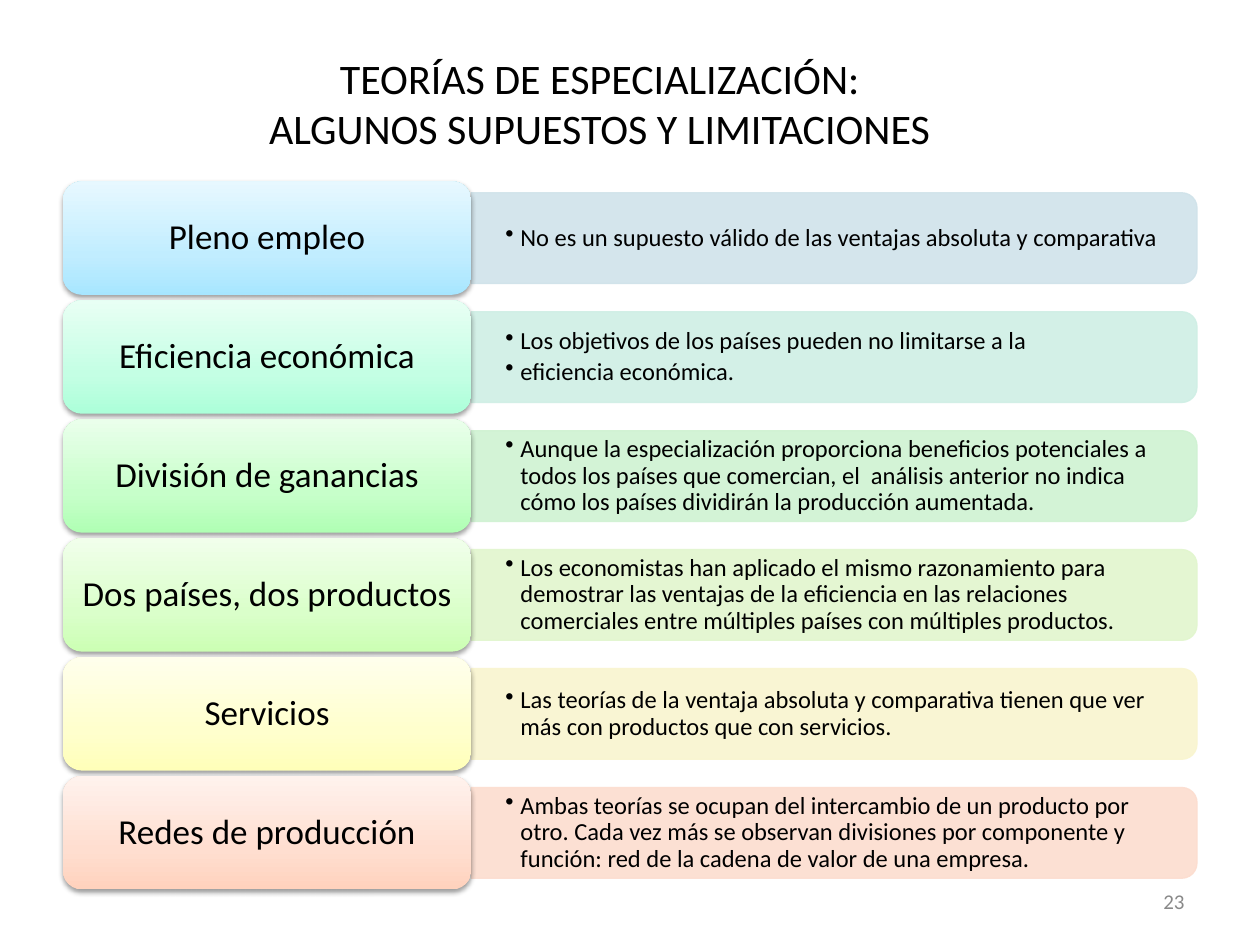
from dataclasses import dataclass

from pptx import Presentation
from pptx import util as u
from pptx.dml.color import RGBColor
from pptx.enum import shapes, text
from pptx.oxml import parse_xml
from pptx.oxml.ns import nsdecls, qn

FONT = "Calibri"
BLACK = RGBColor(0x00, 0x00, 0x00)
GREY = RGBColor(0x89, 0x89, 0x89)

FIRST_MIDDLE = 1.89
ROW_PITCH = 4.72 / 5
LABEL_LEFT, LABEL_WIDTH, LABEL_HEIGHT = 0.5, 3.24, 0.9
PANEL_LEFT, PANEL_WIDTH, PANEL_HEIGHT = 3.74, 5.76, 0.72
NOTE_WIDTH, NOTE_HEIGHT = 5.72, 0.65
LABEL_TEXT_INSET = 0.04
BULLET_INDENT = 0.12


@dataclass(frozen=True)
class Row:
    label: str
    notes: tuple[str, ...]
    panel: RGBColor
    bottom: RGBColor
    middle: RGBColor
    top: RGBColor


def hues(*codes: str) -> tuple[RGBColor, ...]:
    return tuple(RGBColor.from_string(code) for code in codes)


ROWS = (
    Row("Pleno empleo",
        ("No es un supuesto válido de las ventajas absoluta y comparativa",),
        *hues("D0E3EA", "A7E6FF", "C1EDFF", "E7F8FF")),
    Row("Eficiencia económica",
        ("Los objetivos de los países pueden no limitarse a la",
         "eficiencia económica."),
        *hues("CFEFE5", "ACFFD9", "C4FFE4", "E8FFF4")),
    Row("División de ganancias",
        ("Aunque la especialización proporciona beneficios potenciales a "
         "todos los países que comercian, el  análisis anterior no indica "
         "cómo los países dividirán la producción aumentada.",),
        *hues("CFF2D2", "B0FFB4", "C7FFCA", "EAFFEB")),
    Row("Dos países, dos productos",
        ("Los economistas han aplicado el mismo razonamiento para "
         "demostrar las ventajas de la eficiencia en las relaciones "
         "comerciales entre múltiples países con múltiples productos.",),
        *hues("E2F6CE", "CCFFB4", "DAFFCA", "F1FFEB")),
    Row("Servicios",
        ("Las teorías de la ventaja absoluta y comparativa tienen que ver "
         "más con productos que con servicios.",),
        *hues("F9F5CF", "FFFFB9", "FFFFCD", "FFFFEC")),
    Row("Redes de producción",
        ("Ambas teorías se ocupan del intercambio de un producto por "
         "otro. Cada vez más se observan divisiones por componente y "
         "función: red de la cadena de valor de una empresa.",),
        *hues("FCDDCF", "FFD2BD", "FFDED0", "FFF2ED")),
)


def add_text(page, lines, left: float, top: float, width: float, height: float, *,
             size: float, align=text.PP_ALIGN.CENTER, color: RGBColor = BLACK,
             insets: tuple[float, float] = (0.1, 0.05), line_spacing: float = 1.0,
             space_after: float = 0, bullet: bool = False) -> None:
    """Add a middle-anchored text box with one paragraph per line."""
    box = page.shapes.add_textbox(*map(u.Inches, (left, top, width, height)))
    frame = box.text_frame
    frame.word_wrap = True
    frame.vertical_anchor = text.MSO_ANCHOR.MIDDLE
    frame.margin_left = frame.margin_right = u.Inches(insets[0])
    frame.margin_top = frame.margin_bottom = u.Inches(insets[1])
    for index, line in enumerate(lines):
        para = frame.add_paragraph() if index else frame.paragraphs[0]
        para.text = line
        para.alignment = align
        para.line_spacing = line_spacing
        para.space_after = u.Pt(space_after)
        for span in para.runs:
            span.font.name = FONT
            span.font.size = u.Pt(size)
            span.font.color.rgb = color
        if bullet:
            props = para._p.get_or_add_pPr()
            props.set("marL", str(u.Inches(BULLET_INDENT)))
            props.set("indent", str(-u.Inches(BULLET_INDENT)))
            props.append(parse_xml(f'<a:buChar {nsdecls("a")} char="•"/>'))


def add_panel(page, middle: float, color: RGBColor) -> None:
    """Add a bar rounded at its right end: an upright shape turned a quarter."""
    center = PANEL_LEFT + PANEL_WIDTH / 2
    panel = page.shapes.add_shape(
        shapes.MSO_SHAPE.ROUND_2_SAME_RECTANGLE,
        u.Inches(center - PANEL_HEIGHT / 2), u.Inches(middle - PANEL_WIDTH / 2),
        u.Inches(PANEL_HEIGHT), u.Inches(PANEL_WIDTH))
    panel.rotation = 90
    panel.shadow.inherit = False
    panel.line.width = u.Pt(0.75)
    for fill in (panel.fill, panel.line.fill):
        fill.solid()
        fill.fore_color.rgb = color
    for tint in panel._element.spPr.iter(qn("a:srgbClr")):
        tint.append(parse_xml(f'<a:alpha {nsdecls("a")} val="90000"/>'))


def add_label(page, middle: float, row: Row) -> None:
    """Add a rounded rectangle with an upward gradient and a soft shadow."""
    label = page.shapes.add_shape(
        shapes.MSO_SHAPE.ROUNDED_RECTANGLE,
        u.Inches(LABEL_LEFT), u.Inches(middle - LABEL_HEIGHT / 2),
        u.Inches(LABEL_WIDTH), u.Inches(LABEL_HEIGHT))
    label.line.fill.background()
    label.shadow.inherit = False
    stops = "".join(
        f'<a:gs pos="{place * 1000}"><a:srgbClr val="{color}"/></a:gs>'
        for place, color in ((0, row.bottom), (35, row.middle), (100, row.top)))
    props = label._element.spPr
    props.find(qn("a:prstGeom")).addnext(parse_xml(
        f'<a:gradFill {nsdecls("a")} rotWithShape="1"><a:gsLst>{stops}</a:gsLst>'
        '<a:lin ang="16200000" scaled="0"/></a:gradFill>'))
    props.find(qn("a:effectLst")).append(parse_xml(
        f'<a:outerShdw {nsdecls("a")} blurRad="{u.Pt(3.1)}" dist="{u.Pt(1.6)}" '
        'dir="5400000" rotWithShape="0"><a:srgbClr val="000000">'
        '<a:alpha val="38000"/></a:srgbClr></a:outerShdw>'))


def add_row(page, middle: float, row: Row) -> None:
    add_panel(page, middle, row.panel)
    add_text(page, row.notes, PANEL_LEFT, middle - NOTE_HEIGHT / 2,
             NOTE_WIDTH, NOTE_HEIGHT, size=14, align=text.PP_ALIGN.LEFT,
             insets=(0.27, 0.14), line_spacing=0.9, space_after=2.1, bullet=True)
    add_label(page, middle, row)
    height = LABEL_HEIGHT - 2 * LABEL_TEXT_INSET
    add_text(page, [row.label], LABEL_LEFT + LABEL_TEXT_INSET, middle - height / 2,
             LABEL_WIDTH - 2 * LABEL_TEXT_INSET, height, size=20,
             insets=(0.08, 0.04), line_spacing=0.9, space_after=7)


def main() -> None:
    deck = Presentation()
    deck.slide_width, deck.slide_height = u.Inches(10), u.Inches(7.5)
    page = deck.slides.add_slide(deck.slide_layouts[6])
    add_text(page, ["TEORÍAS DE ESPECIALIZACIÓN:\vALGUNOS SUPUESTOS Y LIMITACIONES"],
             0.26, 0.19, 9, 1.25, size=24)
    for index, row in enumerate(ROWS):
        add_row(page, FIRST_MIDDLE + index * ROW_PITCH, row)
    add_text(page, ["23"], 7.17, 6.95, 2.33, 0.4, size=12,
             align=text.PP_ALIGN.RIGHT, color=GREY)
    deck.save("out.pptx")


if __name__ == "__main__":
    main()
